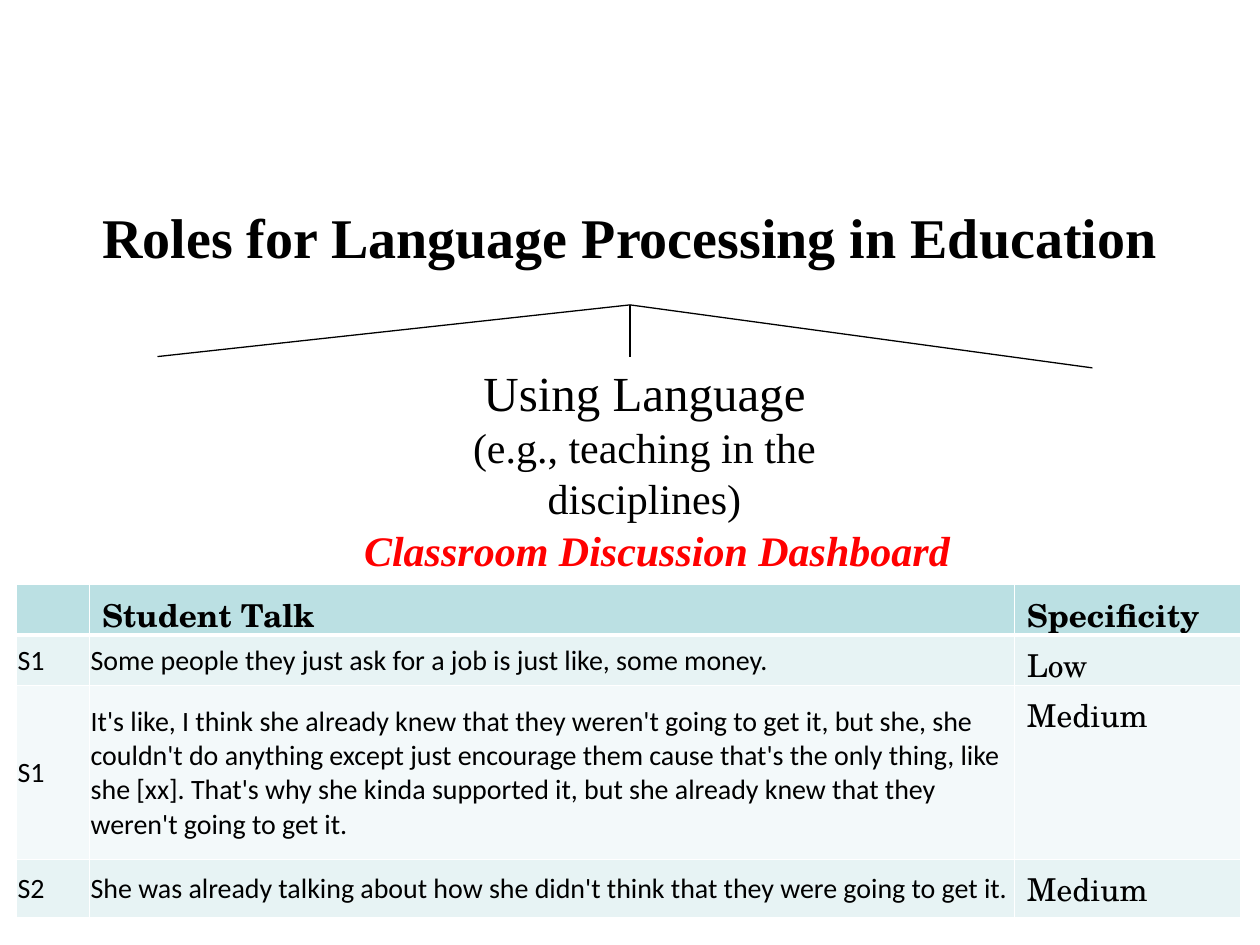
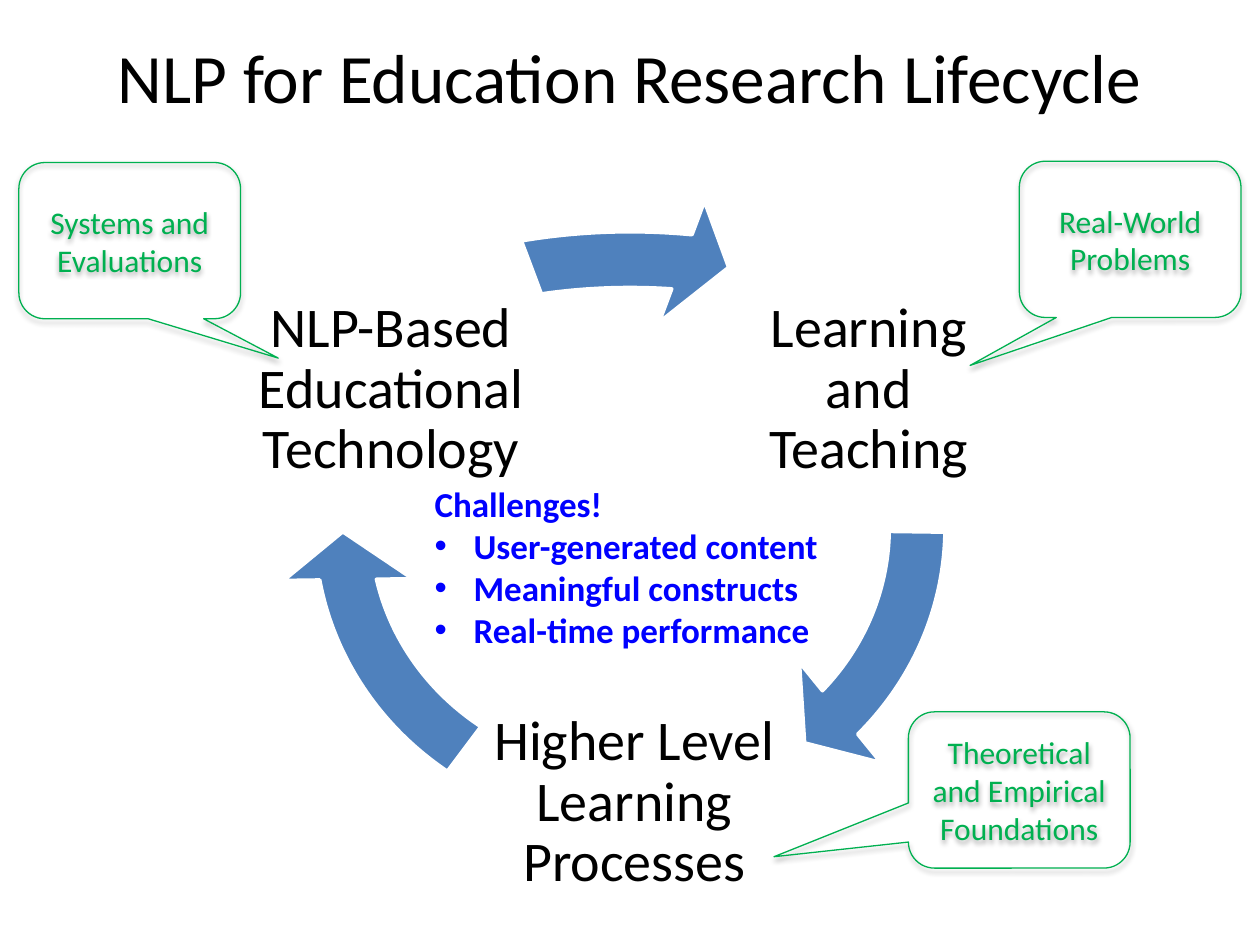
from dataclasses import dataclass

from lxml.etree import SubElement
from pptx import Presentation
from pptx.dml.color import RGBColor
from pptx.enum.shapes import MSO_CONNECTOR, MSO_SHAPE
from pptx.enum.text import MSO_ANCHOR, MSO_AUTO_SIZE, PP_ALIGN
from pptx.oxml.ns import qn
from pptx.util import Inches, Pt


@dataclass(frozen=True)
class Theme:
    black: str = "000000"
    white: str = "FFFFFF"
    red: str = "FF0000"
    green: str = "00B050"
    blue: str = "0000FF"
    arrow: str = "4F81BD"
    header: str = "BBE0E3"
    bands: tuple = ("E7F3F4", "F3F9FA")
    sans: str = "Calibri"
    serif: str = "Times New Roman"
    school: str = "TeX Gyre Schola"
    bullet: str = "Arial"
    cycle_title: float = 39.6
    heading: float = 32
    subheading: float = 28
    detail: float = 24
    challenge: float = 20
    label: float = 18
    speech: float = 16


THEME = Theme()


# Shared helpers
def font_format(name, size, color=THEME.black, bold=False, italic=False):
    return {"name": name, "size": Pt(size), "color": color,
            "bold": bold, "italic": italic}


def apply(target, values):
    for name, value in values.items():
        if name == "color":
            target.color.rgb = RGBColor.from_string(value)
        else:
            setattr(target, name, value)


def write(frame, lines, align=PP_ALIGN.LEFT, **para_format):
    """Fill a text frame with (text, font format) lines."""
    for index, (text, font) in enumerate(lines):
        para = frame.add_paragraph() if index else frame.paragraphs[0]
        apply(para, {"alignment": align, **para_format})
        span = para.add_run()
        span.text = text
        apply(span.font, font)


def place(shape, box):
    for name, value in zip(("left", "top", "width", "height"), box):
        setattr(shape, name, Inches(value))


def add_text(page, box, lines, align=PP_ALIGN.CENTER, frame_format=None, **para_format):
    frame = page.shapes.add_textbox(*map(Inches, box)).text_frame
    apply(frame, {"word_wrap": True, **(frame_format or {})})
    write(frame, lines, align, **para_format)
    return frame


def add_title(page, box, text, font):
    title = page.shapes.title
    place(title, box)
    apply(title.text_frame, {"word_wrap": True, "auto_size": MSO_AUTO_SIZE.NONE,
                             "vertical_anchor": MSO_ANCHOR.MIDDLE})
    write(title.text_frame, [(text, font)], PP_ALIGN.CENTER)


def add_page(deck):
    return deck.slides.add_slide(deck.slide_layouts[5])


# Slide 1: roles tree and discussion table
def add_branches(page, box):
    left, top, width, height = box
    apex = left + 3.75
    ends = ((left, top + 0.41), (apex, top + 0.41), (left + width, top + height))
    for x, y in ends:
        branch = page.shapes.add_connector(
            MSO_CONNECTOR.STRAIGHT, *map(Inches, (apex, top, x, y)))
        apply(branch.line, {"color": THEME.black, "width": Pt(0.75)})
        SubElement(branch._element.spPr, qn("a:effectLst"))


def add_role(page, box):
    frame = add_text(page, box, [
        ("Using Language", font_format(THEME.serif, THEME.subheading)),
        ("(e.g., teaching in the disciplines)", font_format(THEME.serif, THEME.detail)),
    ])
    # The heading sits slightly left of centre
    frame.paragraphs[0]._p.get_or_add_pPr().set("marR", str(Inches(0.17)))


def set_borders(cell, top, bottom):
    properties = cell._tc.get_or_add_tcPr()
    for side, points in (("L", 1), ("R", 1), ("T", top), ("B", bottom)):
        line = SubElement(properties, qn(f"a:ln{side}"), w=str(Pt(points)))
        fill = SubElement(line, qn("a:solidFill"))
        SubElement(fill, qn("a:srgbClr"), val=THEME.white)


def add_talk_table(page, box):
    rows = (
        ("", "Student Talk", "Specificity"),
        ("S1", "Some people they just ask for a job is just like, some money.", "Low"),
        ("S1", "It's like, I think she already knew that they weren't going to get it, "
               "but she, she couldn't do anything except just encourage them cause "
               "that's the only thing, like she [xx]. That's why she kinda supported it, "
               "but she already knew that they weren't going to get it.", "Medium"),
        ("S2", "She was already talking about how she didn't think that they were "
               "going to get it.", "Medium"),
    )
    table = page.shapes.add_table(len(rows), 3, *map(Inches, box)).table
    for column, width in zip(table.columns, (0.58, 7.34, 1.8)):
        column.width = Inches(width)
    for row, height in zip(table.rows, (0.29, 0.35, 1.38, 0.46)):
        row.height = Inches(height)

    tight = {"margin_left": Inches(0.01), "margin_right": Inches(0.01),
             "margin_top": Inches(0.01), "margin_bottom": 0,
             "vertical_anchor": MSO_ANCHOR.MIDDLE}
    for r, row in enumerate(rows):
        for c, text in enumerate(row):
            cell = table.cell(r, c)
            set_borders(cell, 3 if r == 1 else 1, 3 if r == 0 else 1)
            cell.fill.solid()
            fill = THEME.bands[(r - 1) % 2] if r else THEME.header
            cell.fill.fore_color.rgb = RGBColor.from_string(fill)
            is_speech = r > 0 and c < 2
            if is_speech:
                apply(cell, tight)
                font = font_format(THEME.sans, THEME.speech)
            else:
                font = font_format(THEME.school, THEME.label, bold=r == 0)
            if text:
                write(cell.text_frame, [(text, font)])


def build_roles(deck):
    page = add_page(deck)
    add_title(page, (0.5, 1.55, 9, 0.64), "Roles for Language Processing in Education",
              font_format(THEME.serif, THEME.heading, bold=True))
    add_role(page, (2.91, 2.83, 4.58, 0.98))
    add_text(page, (2.23, 4.11, 5.97, 0.5), [
        ("Classroom Discussion Dashboard",
         font_format(THEME.serif, THEME.detail, THEME.red, True, True))])
    add_branches(page, (1.25, 2.42, 7.42, 0.5))
    add_talk_table(page, (0.13, 4.64, 9.72, 2.64))


# Slide 2: research cycle
def add_cycle(page, box):
    left, top, width, height = box
    # Text, text offset and width, arrow tip and start, arrow widening and drop
    stages = (
        ("Learning and Teaching", (3.56, 0.44, 2.25), (24.776, 0.467), (0, 0)),
        ("Higher Level Learning Processes", (1.48, 3.72, 2.69), (101.768, 76.13), (0, 0)),
        ("NLP-Based Educational Technology", (-0.23, 0.44, 2.25), (168.56, 149.677),
         (1.02, 0.02)),
    )
    inset = Inches(0.04)
    frame_format = {f"margin_{side}": inset for side in ("left", "top", "right", "bottom")}
    frame_format["vertical_anchor"] = MSO_ANCHOR.MIDDLE
    for text, (x, y, text_width), (tip, start), (stretch, drop) in stages:
        add_text(page, (left + x, top + y, text_width, 2.25),
                 [(text, font_format(THEME.sans, THEME.heading))],
                 frame_format=frame_format, line_spacing=0.9)
        ring = (left - stretch, top + drop, width + 2 * stretch, height)
        arrow = page.shapes.add_shape(MSO_SHAPE.CIRCULAR_ARROW, *map(Inches, ring))
        for index, value in enumerate((0.083, 5.763, tip, start, 0.096)):
            arrow.adjustments[index] = value
        arrow.shadow.inherit = False
        arrow.fill.solid()
        arrow.fill.fore_color.rgb = RGBColor.from_string(THEME.arrow)
        apply(arrow.line, {"color": THEME.white, "width": Pt(2)})


def add_callout(page, box, lines, pointer):
    callout = page.shapes.add_shape(MSO_SHAPE.ROUNDED_RECTANGULAR_CALLOUT,
                                    *map(Inches, box))
    for index, value in enumerate((*pointer, 0.167)):
        callout.adjustments[index] = value
    callout.fill.background()
    apply(callout.line, {"color": THEME.green, "width": Pt(0.75)})
    # Soft shadow straight below
    callout.shadow.inherit = False
    effects = callout._element.spPr.find(qn("a:effectLst"))
    shadow = SubElement(effects, qn("a:outerShdw"), blurRad=str(Pt(3.1)),
                        dist=str(Pt(1.8)), dir="5400000", rotWithShape="0")
    color = SubElement(shadow, qn("a:srgbClr"), val=THEME.black)
    SubElement(color, qn("a:alpha"), val="35000")
    apply(callout.text_frame, {"word_wrap": True, "vertical_anchor": MSO_ANCHOR.MIDDLE})
    font = font_format(THEME.sans, THEME.label, THEME.green)
    write(callout.text_frame, [(line, font) for line in lines], PP_ALIGN.CENTER)


def add_challenges(page, box):
    font = font_format(THEME.sans, THEME.challenge, THEME.blue, bold=True)
    lines = ("Challenges!", "User-generated content", "Meaningful constructs",
             "Real-time performance")
    frame = add_text(page, box, [(line, font) for line in lines], PP_ALIGN.LEFT)
    for para in frame.paragraphs[1:]:
        properties = para._p.get_or_add_pPr()
        properties.set("marL", str(Inches(0.31)))
        properties.set("indent", str(-Inches(0.31)))
        SubElement(properties, qn("a:buFont"), typeface=THEME.bullet)
        SubElement(properties, qn("a:buChar"), char="•")


def build_lifecycle(deck):
    page = add_page(deck)
    add_title(page, (0.5, -0.02, 9, 1.25), "NLP for Education Research Lifecycle",
              font_format(THEME.sans, THEME.cycle_title))
    add_cycle(page, (2.21, 1.53, 5.58, 5.32))
    callouts = (
        ((8.09, 1.28), ("Real-World", "Problems"), (-0.722, 0.807)),
        ((7.21, 5.65), ("Theoretical and Empirical Foundations",), (-1.106, 0.427)),
        ((0.15, 1.29), ("Systems and Evaluations",), (0.67, 0.752)),
    )
    for corner, lines, pointer in callouts:
        add_callout(page, (*corner, 1.76, 1.24), lines, pointer)
    add_challenges(page, (3.35, 3.78, 3.31, 1.45))


def main():
    deck = Presentation()
    apply(deck, {"slide_width": Inches(10), "slide_height": Inches(7.5)})
    build_roles(deck)
    build_lifecycle(deck)
    deck.save("out.pptx")


if __name__ == "__main__":
    main()
